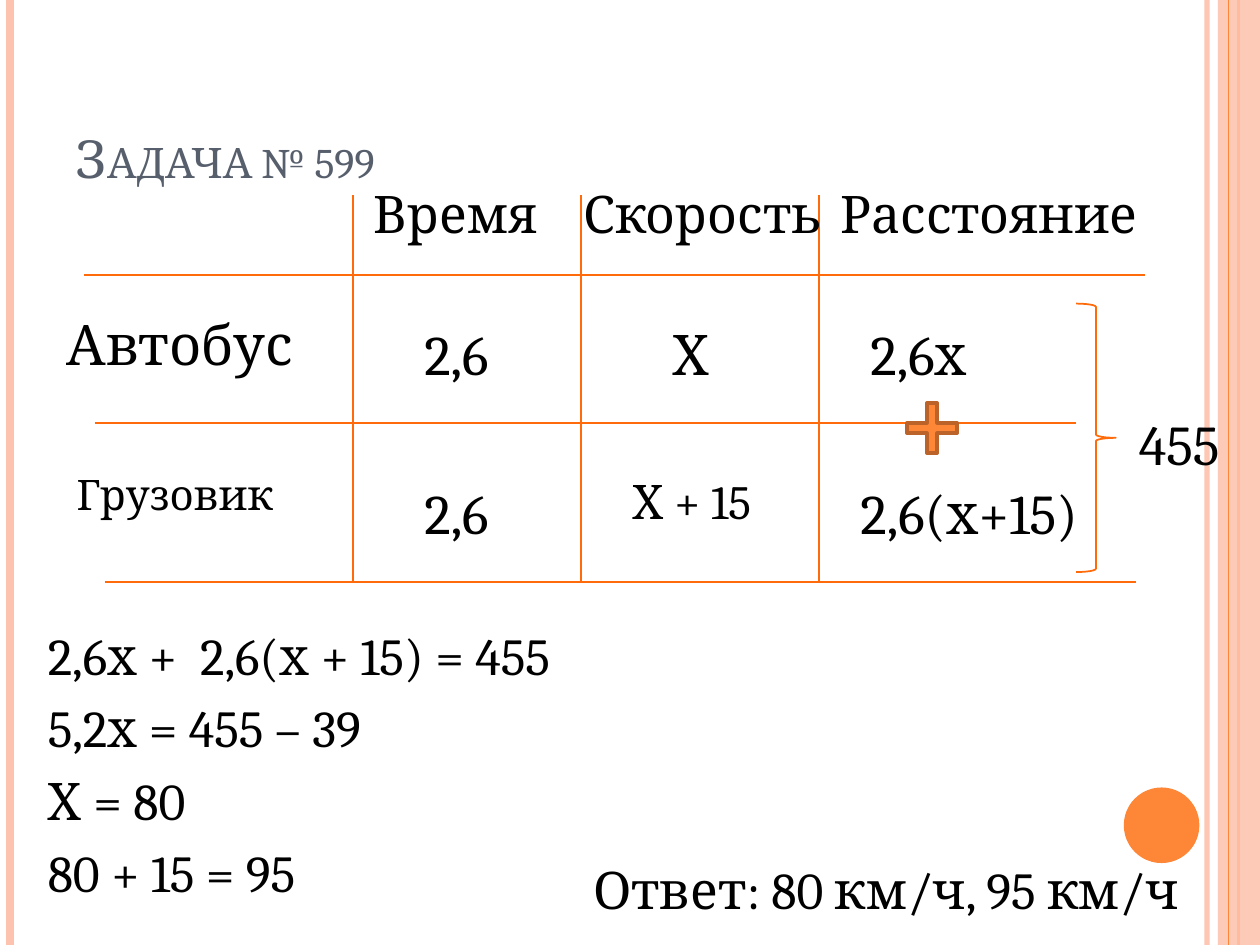
import pptx
import pptx.dml.color
import pptx.enum.shapes
import pptx.enum.text
import pptx.oxml.ns
import pptx.util
from lxml import etree

Pt = pptx.util.Pt
RGBColor = pptx.dml.color.RGBColor
SHAPES = pptx.enum.shapes.MSO_SHAPE
ANCHOR = pptx.enum.text.MSO_ANCHOR

ORANGE = RGBColor(0xFE, 0x86, 0x37)
PEACH = RGBColor(0xFE, 0xC3, 0xAE)
RULE = RGBColor(0xFF, 0x6B, 0x0A)
BROWN = RGBColor(0xBC, 0x63, 0x29)
SLATE = RGBColor(0x57, 0x5F, 0x6D)
BLACK = RGBColor(0, 0, 0)


def set_alpha(properties, percent):
    """Make the first solid colour inside a shape's properties translucent."""
    color = next(properties.iter(pptx.oxml.ns.qn("a:srgbClr")))
    alpha = etree.SubElement(color, pptx.oxml.ns.qn("a:alpha"))
    alpha.set("val", str(percent * 1000))


def write_text(shape, text, size=32, color=BLACK, font="Cambria", anchor=ANCHOR.TOP,
               space_before=None, line_spacing=None, small_caps=False):
    """Fill a shape with one paragraph for each line of text."""
    frame = shape.text_frame
    frame.word_wrap = True
    frame.vertical_anchor = anchor
    for index, line in enumerate(text.split("\n")):
        paragraph = frame.add_paragraph() if index else frame.paragraphs[0]
        paragraph.space_before = Pt(size * 0.2 if space_before is None else space_before)
        if line_spacing:
            paragraph.line_spacing = line_spacing
        run = paragraph.add_run()
        run.text = line
        run.font.name = font
        run.font.size = Pt(size)
        run.font.color.rgb = color
        if small_caps:
            run.font._element.set("cap", "small")


class SlideBuilder:
    def __init__(self, slide, line_color, line_width):
        self.slide = slide
        self.line_color = line_color
        self.line_width = line_width

    def line(self, x1, y1, x2, y2, color=None, width=None, alpha=None):
        connector = self.slide.shapes.add_connector(
            pptx.enum.shapes.MSO_CONNECTOR.STRAIGHT, Pt(x1), Pt(y1), Pt(x2), Pt(y2))
        connector.line.color.rgb = color or self.line_color
        connector.line.width = Pt(width or self.line_width)
        properties = connector._element.spPr
        if alpha:
            set_alpha(properties, alpha)
        etree.SubElement(properties, pptx.oxml.ns.qn("a:effectLst"))

    def shape(self, kind, left, top, width, height, fill=None, line=None,
              line_width=None, alpha=None):
        shape = self.slide.shapes.add_shape(kind, Pt(left), Pt(top), Pt(width), Pt(height))
        shape.shadow.inherit = False
        if fill:
            shape.fill.solid()
            shape.fill.fore_color.rgb = fill
            if alpha:
                set_alpha(shape._element.spPr, alpha)
        else:
            shape.fill.background()
        if line:
            shape.line.color.rgb = line
            shape.line.width = Pt(line_width or self.line_width)
        else:
            shape.line.fill.background()
        return shape

    def text(self, text, left, top, width, height=51, **text_format):
        box = self.slide.shapes.add_textbox(Pt(left), Pt(top), Pt(width), Pt(height))
        write_text(box, text, **text_format)


def draw_frame(builder, height):
    for x, color, width, alpha in [(689.8, PEACH, 3, 93), (5.8, PEACH, 4.5, None),
                                   (707.8, ORANGE, 1.5, None)]:
        builder.line(x, 0, x, height, color, width, alpha)
    builder.shape(SHAPES.RECTANGLE, 696, 0, 24, height, fill=PEACH, alpha=87)
    builder.line(702, 0, 702, height, ORANGE, 0.75)
    builder.shape(SHAPES.OVAL, 642.2, 450, 43.2, 43.2, fill=ORANGE)


def draw_task_table(builder):
    top, bottom = 111.6, 332.6
    for left, y, right in [(48, 157, 654.5), (54, 241.9, 614.9), (59.8, bottom, 649.4)]:
        builder.line(left, y, right, y)
    for x in (201.6, 331.9, 468):
        builder.line(x, top, x, bottom)

    header_top, bus_top, truck_top = 100, 179.3, 270
    for label, left, width in [("Время", 206.6, 108.5), ("Скорость", 326.2, 153.5),
                               ("Расстояние", 473, 187.2)]:
        builder.text(label, left, header_top, width, size=29.6)

    builder.text("Автобус", 31, 173.5, 181.4)
    builder.text("2,6", 235.4, bus_top, 62.6)
    builder.text("Х", 377.3, bus_top, 51)
    builder.text("2,6х", 490.3, bus_top, 124.6)

    builder.text("Грузовик", 36.7, 264.2, 187.2, size=24, space_before=6)
    builder.text("2,6", 235.4, truck_top, 73.4)
    builder.text("Х + 15", 354.2, truck_top, 102.2, size=27.2, line_spacing=0.9)
    builder.text("2,6(х+15)", 484.6, truck_top, 158.4)

    builder.shape(SHAPES.RIGHT_BRACE, 614.9, 173.5, 22.7, 153.4, line=RULE)
    builder.text("455", 643.7, 230.4, 124.6)
    plus = builder.shape(SHAPES.CROSS, 518.4, 230.4, 28.4, 28.4,
                         fill=ORANGE, line=BROWN, line_width=2)
    plus.adjustments[0] = 0.395


def main():
    presentation = pptx.Presentation()
    presentation.slide_width = Pt(720)
    presentation.slide_height = Pt(540)
    slide = presentation.slides.add_slide(presentation.slide_layouts[6])
    builder = SlideBuilder(slide, RULE, 1)

    draw_frame(builder, 540)
    builder.text("Задача № 599", 36, 21.6, 588, 90, size=30, color=SLATE,
                 anchor=ANCHOR.BOTTOM, space_before=0, small_caps=True)
    draw_task_table(builder)
    builder.text("2,6х +  2,6(х + 15) = 455\n5,2х = 455 – 39\nХ = 80\n80 + 15 = 95",
                 20.2, 352.8, 334.8, 187.2, size=29.6)
    builder.text("Ответ: 80 км/ч, 95 км/ч", 331.9, 486.7, 362.9, 53.3, size=29.6)
    presentation.save("out.pptx")


if __name__ == "__main__":
    main()
